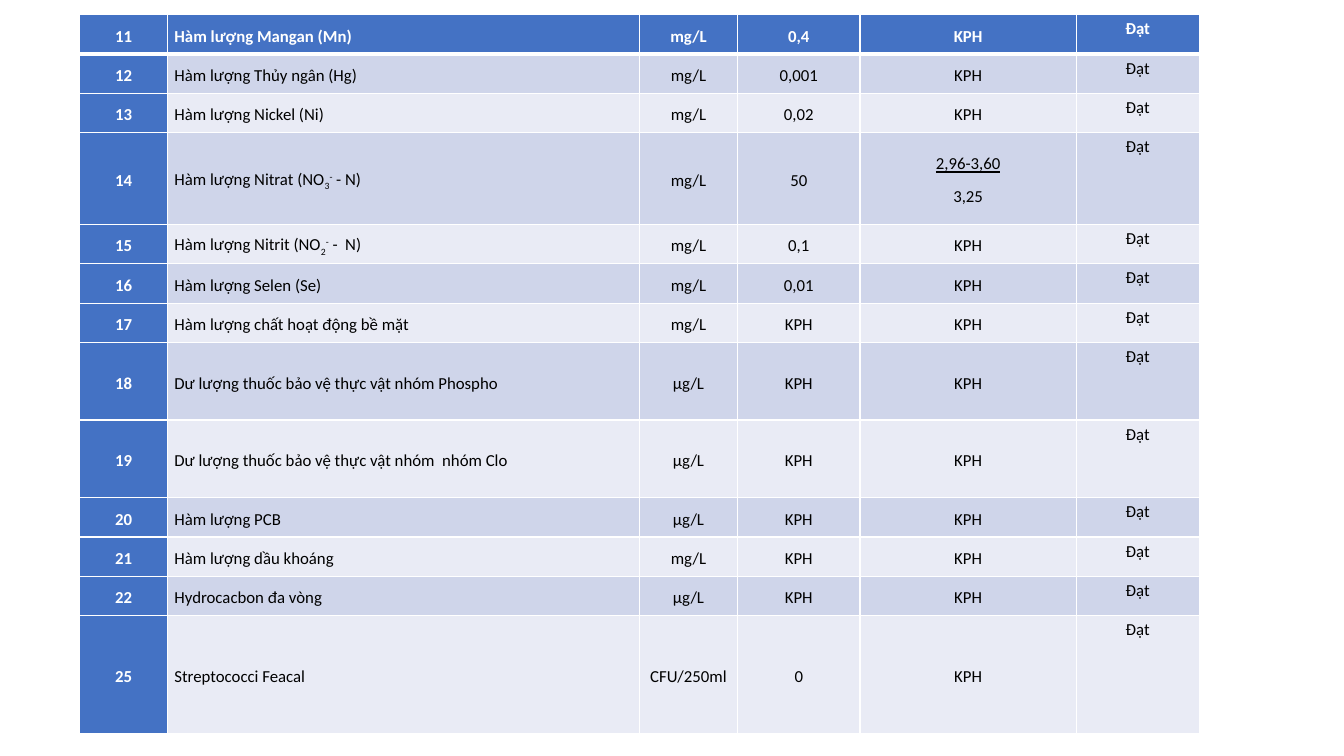
from dataclasses import dataclass

from lxml import etree
from pptx import Presentation
from pptx.dml.color import RGBColor
from pptx.enum.text import MSO_ANCHOR, PP_ALIGN
from pptx.oxml.ns import qn
from pptx.util import Pt

LEFT, CENTER = PP_ALIGN.LEFT, PP_ALIGN.CENTER
TOP, MIDDLE = MSO_ANCHOR.TOP, MSO_ANCHOR.MIDDLE

SUB, SUPER = -25000, 30000
UNDERLINED_RANGE = "2,96-3,60"
PASS = "Đạt"
NAME_COLUMN, RESULT_COLUMN = 1, 5

COLUMN_WIDTHS = [62.6, 337.2, 70, 87.6, 154.4, 87.8]
LINE_ROW, NITRATE_ROW, PESTICIDE_ROW, LAST_ROW = 28.15, 65.3, 55.4, 84.4


def ion_name(prefix, digit, suffix):
    """Return runs as (text, baseline) pairs for an ion with charge minus."""
    return [(prefix, 0), (digit, SUB), ("-", SUPER), (suffix, 0)]


# Row height, number, indicator, unit, limit, measured values
INDICATORS = [
    (LINE_ROW, "11", "Hàm lượng Mangan (Mn)", "mg/L", "0,4", "KPH"),
    (LINE_ROW, "12", "Hàm lượng Thủy ngân (Hg)", "mg/L", "0,001", "KPH"),
    (LINE_ROW, "13", "Hàm lượng Nickel (Ni)", "mg/L", "0,02", "KPH"),
    (NITRATE_ROW, "14", ion_name("Hàm lượng Nitrat (NO", "3", " - N)"),
     "mg/L", "50", UNDERLINED_RANGE + "\n3,25"),
    (LINE_ROW, "15", ion_name("Hàm lượng Nitrit (NO", "2", " -  N)"),
     "mg/L", "0,1", "KPH"),
    (LINE_ROW, "16", "Hàm lượng Selen (Se)", "mg/L", "0,01", "KPH"),
    (LINE_ROW, "17", "Hàm lượng chất hoạt động bề mặt", "mg/L", "KPH", "KPH"),
    (PESTICIDE_ROW, "18", "Dư lượng thuốc bảo vệ thực vật nhóm Phospho",
     "μg/L", "KPH", "KPH"),
    (PESTICIDE_ROW, "19", "Dư lượng thuốc bảo vệ thực vật nhóm  nhóm Clo",
     "μg/L", "KPH", "KPH"),
    (LINE_ROW, "20", "Hàm lượng PCB", "μg/L", "KPH", "KPH"),
    (LINE_ROW, "21", "Hàm lượng dầu khoáng", "mg/L", "KPH", "KPH"),
    (LINE_ROW, "22", "Hydrocacbon đa vòng", "μg/L", "KPH", "KPH"),
    (LAST_ROW, "25", "Streptococci Feacal", "CFU/250ml", "0", "KPH"),
]


@dataclass(frozen=True)
class Theme:
    font: str = "Calibri"
    size: float = 12
    accent: str = "4472C4"
    dark_band: str = "CFD5EA"
    light_band: str = "E9EBF5"
    white: str = "FFFFFF"
    black: str = "000000"
    rule: float = 1
    header_rule: float = 3


class SlideBuilder:
    def __init__(self, slide, theme):
        self.slide = slide
        self.theme = theme

    def indicator_table(self, left, top, widths, indicators):
        heights = [indicator[0] for indicator in indicators]
        table = self.slide.shapes.add_table(
            len(heights), len(widths), Pt(left), Pt(top),
            Pt(sum(widths)), Pt(sum(heights))).table
        table.first_col = True
        for column, width in zip(table.columns, widths):
            column.width = Pt(width)
        for row_index, (height, *contents) in enumerate(indicators):
            table.rows[row_index].height = Pt(height)
            for column_index, content in enumerate([*contents, PASS]):
                self.cell(table.cell(row_index, column_index), content,
                          row_index, column_index)

    def cell(self, cell, content, row_index, column_index):
        theme = self.theme
        emphasized = row_index == 0 or column_index == 0
        band = theme.dark_band if row_index % 2 else theme.light_band
        self.borders(cell, row_index)
        cell.fill.solid()
        cell.fill.fore_color.rgb = RGBColor.from_string(
            theme.accent if emphasized else band)
        cell.margin_left = cell.margin_right = Pt(5)
        cell.margin_top = cell.margin_bottom = 0
        cell.vertical_anchor = TOP if column_index == RESULT_COLUMN else MIDDLE
        frame = cell.text_frame
        if isinstance(content, str):
            frame.text = content
        else:
            self.runs(frame.paragraphs[0], content)
        for paragraph in frame.paragraphs:
            paragraph.alignment = LEFT if column_index == NAME_COLUMN else CENTER
            paragraph.line_spacing = 1.2
            paragraph.space_after = Pt(6)
            font = paragraph.font
            font.name, font.size = theme.font, Pt(theme.size)
            font.bold = emphasized
            font.color.rgb = RGBColor.from_string(
                theme.white if emphasized else theme.black)
            if paragraph.text == UNDERLINED_RANGE:
                font.underline = True

    def runs(self, paragraph, pieces):
        for text, baseline in pieces:
            run = paragraph.add_run()
            run.text = text
            if baseline:
                run._r.get_or_add_rPr().set("baseline", str(baseline))

    def borders(self, cell, row_index):
        """Draw white rules, thicker where the first row meets the second."""
        theme = self.theme
        widths = {
            "a:lnL": theme.rule,
            "a:lnR": theme.rule,
            "a:lnT": theme.header_rule if row_index == 1 else theme.rule,
            "a:lnB": theme.header_rule if row_index == 0 else theme.rule,
        }
        properties = cell._tc.get_or_add_tcPr()
        for tag, width in widths.items():
            line = etree.SubElement(properties, qn(tag), w=str(Pt(width)))
            fill = etree.SubElement(line, qn("a:solidFill"))
            etree.SubElement(fill, qn("a:srgbClr"), val=theme.white)


def main():
    presentation = Presentation()
    presentation.slide_width, presentation.slide_height = Pt(960), Pt(540)
    slide = presentation.slides.add_slide(presentation.slide_layouts[6])
    builder = SlideBuilder(slide, Theme())
    builder.indicator_table(57, 10.5, COLUMN_WIDTHS, INDICATORS)
    presentation.save("out.pptx")


if __name__ == "__main__":
    main()
